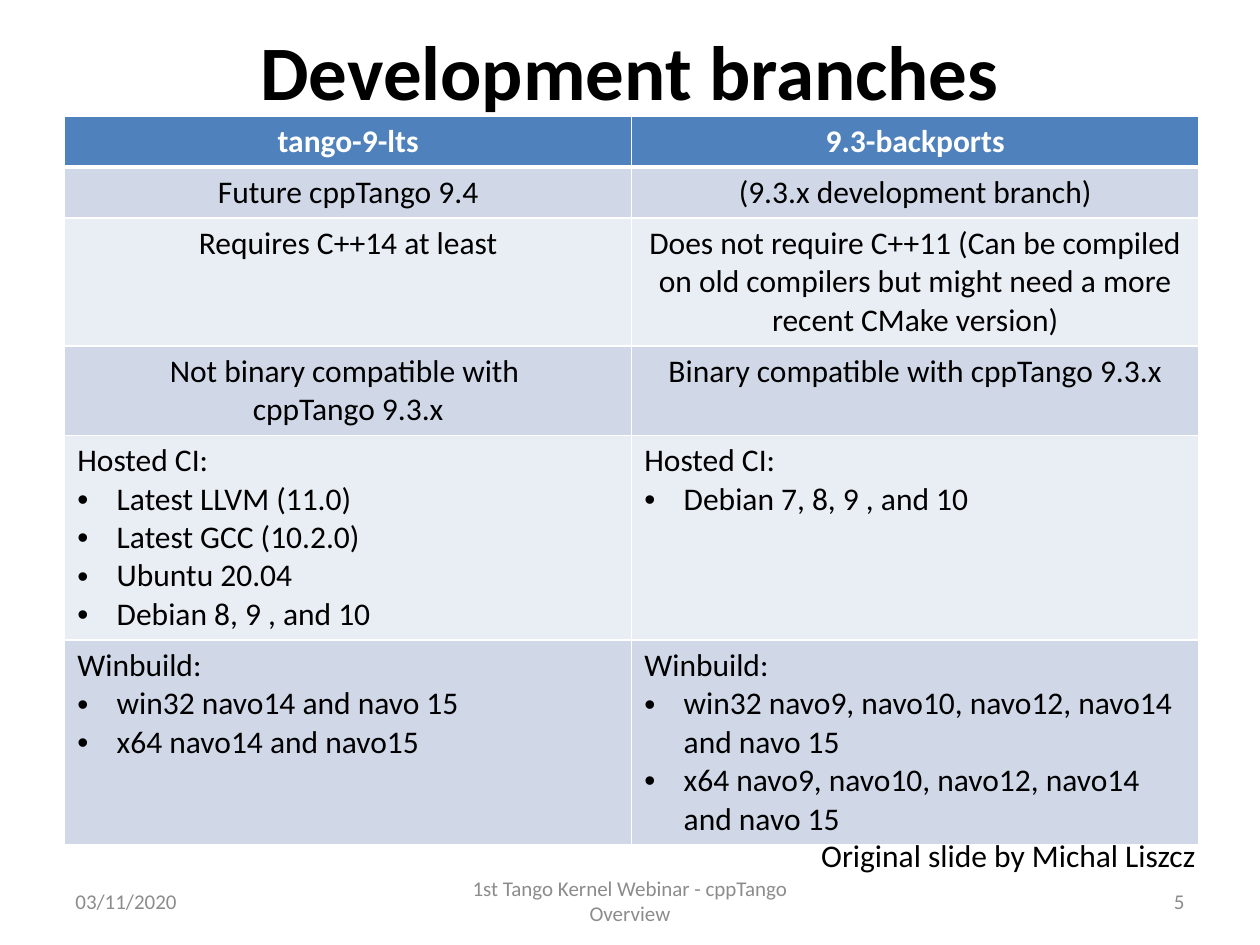
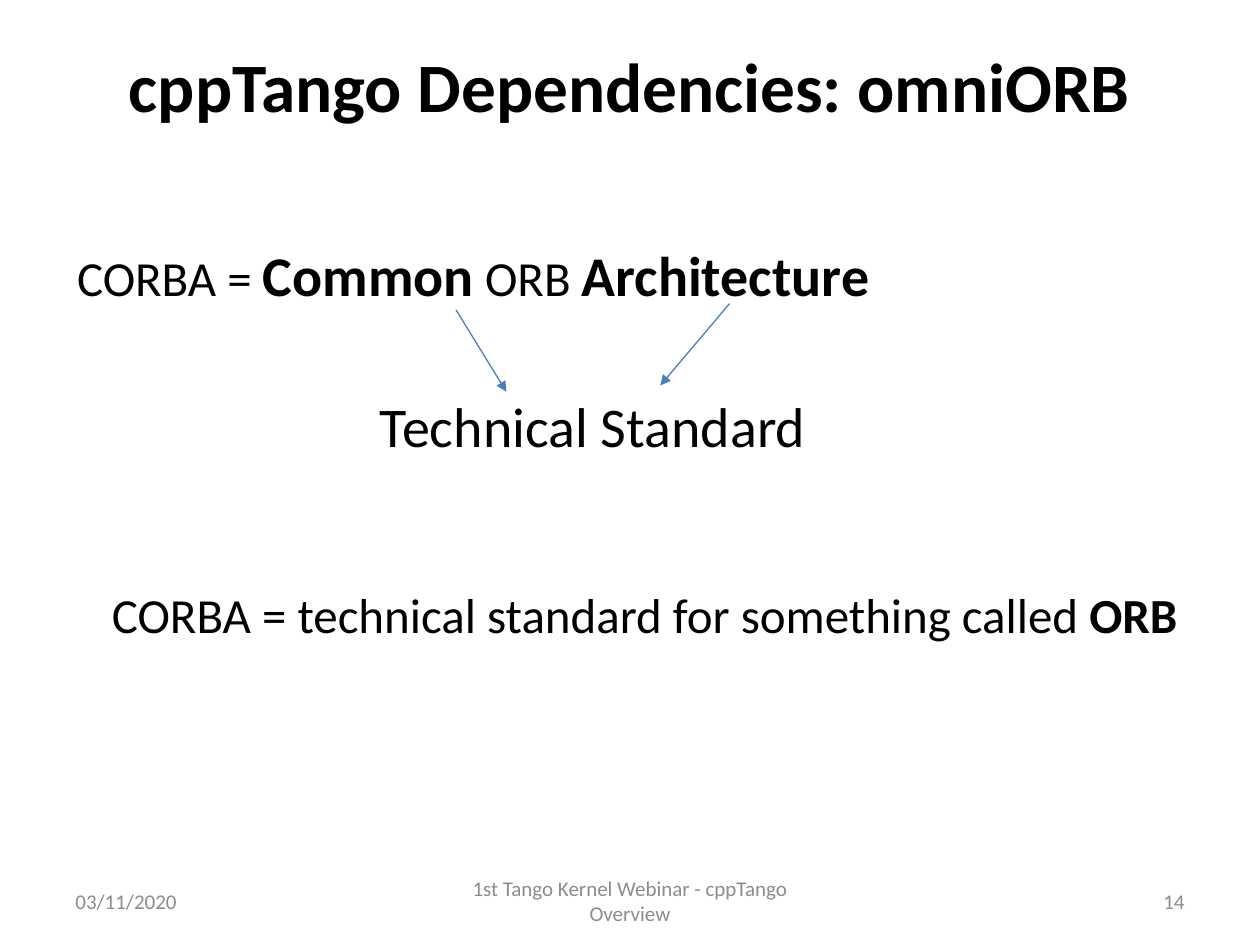
import pptx
import pptx.util
import pptx.dml.color
import pptx.enum.shapes
import pptx.enum.text
import pptx.oxml.ns
from lxml import etree

Pt = pptx.util.Pt
ALIGN = pptx.enum.text.PP_ALIGN
ANCHOR = pptx.enum.text.MSO_ANCHOR
qn = pptx.oxml.ns.qn

# Shared style
FONT = "Calibri"
BLACK, WHITE, GREY = "000000", "FFFFFF", "8C8C8C"
HEADER_BLUE, BAND_DARK, BAND_LIGHT = "4F81BD", "D0D8E8", "E9EDF4"
ARROW_BLUE = "4B7EBC"
MARGIN, CONTENT_WIDTH = 36, 648
BULLET_INDENT = 22.5
TABLE_SIZE, LINE_HEIGHT, CELL_PADDING = 18, 21.97, 7.2
DATE = "03/11/2020"
EVENT = "1st Tango Kernel Webinar - cppTango Overview"

# Table content: (left cell, right cell, lines in the taller cell)
# A tuple is a heading followed by bullets.
BRANCHES = [
    ("tango-9-lts", "9.3-backports", 1),
    ("Future cppTango 9.4", "(9.3.x development branch)", 1),
    ("Requires C++14 at least",
     "Does not require C++11 (Can be compiled on old compilers "
     "but might need a more recent CMake version)", 3),
    ("Not binary compatible with \ncppTango 9.3.x",
     "Binary compatible with cppTango 9.3.x", 2),
    (("Hosted CI:", "Latest LLVM (11.0)", "Latest GCC (10.2.0)",
      "Ubuntu 20.04", "Debian 8, 9 , and 10"),
     ("Hosted CI:", "Debian 7, 8, 9 , and 10"), 5),
    (("Winbuild:", "win32 navo14 and navo 15", "x64 navo14 and navo15"),
     ("Winbuild:", "win32 navo9, navo10, navo12, navo14 and navo 15",
      "x64 navo9, navo10, navo12, navo14 and navo 15"), 5),
]


def color(hex_code):
    return pptx.dml.color.RGBColor.from_string(hex_code)


def style(font, size, hex_code=BLACK, bold=False):
    font.name = FONT
    font.size = Pt(size)
    font.bold = bold
    font.color.rgb = color(hex_code)


def add_text(slide, box, runs, size, hex_code=BLACK, bold=False,
             align=ALIGN.LEFT, anchor=ANCHOR.TOP):
    """Add one paragraph; runs is a string or a list of (text, size, bold)."""
    frame = slide.shapes.add_textbox(*map(Pt, box)).text_frame
    frame.word_wrap = True
    frame.vertical_anchor = anchor
    paragraph = frame.paragraphs[0]
    paragraph.alignment = align
    if isinstance(runs, str):
        paragraph.text = runs
        style(paragraph.font, size, hex_code, bold)
        return
    for text, run_size, run_bold in runs:
        run = paragraph.add_run()
        run.text = text
        style(run.font, run_size, hex_code, run_bold)


def add_title(slide, text, top, size):
    add_text(slide, (MARGIN, top, CONTENT_WIDTH, 90), text, size, bold=True,
             align=ALIGN.CENTER, anchor=ANCHOR.MIDDLE)


def add_footer(slide, number):
    for left, width, text, align in (
            (MARGIN, 168, DATE, ALIGN.LEFT),
            (246, 228, EVENT, ALIGN.CENTER),
            (516, 168, str(number), ALIGN.RIGHT)):
        add_text(slide, (left, 500.5, width, 28.75), text, 12, GREY,
                 align=align, anchor=ANCHOR.MIDDLE)


def add_arrow(slide, start, end):
    arrow = slide.shapes.add_connector(
        pptx.enum.shapes.MSO_CONNECTOR.STRAIGHT, *map(Pt, start + end))
    arrow.line.color.rgb = color(ARROW_BLUE)
    arrow.line.width = Pt(0.75)
    etree.SubElement(arrow.line._get_or_add_ln(), qn("a:tailEnd"), type="triangle")
    etree.SubElement(arrow._element.spPr, qn("a:effectLst"))


def add_bullet(paragraph):
    properties = paragraph._p.get_or_add_pPr()
    properties.set("marL", str(Pt(BULLET_INDENT)))
    properties.set("indent", str(-Pt(BULLET_INDENT)))
    etree.SubElement(properties, qn("a:buFont"), typeface="Arial")
    etree.SubElement(properties, qn("a:buChar"), char="•")


def set_borders(cell, top, bottom):
    properties = cell._tc.get_or_add_tcPr()
    widths = (("lnL", 1), ("lnR", 1), ("lnT", top), ("lnB", bottom))
    for position, (side, width) in enumerate(widths):
        border = etree.Element(qn("a:" + side), w=str(Pt(width)))
        fill = etree.SubElement(border, qn("a:solidFill"))
        etree.SubElement(fill, qn("a:srgbClr"), val=WHITE)
        properties.insert(position, border)


def fill_cell(cell, content, row):
    header = row == 0
    cell.fill.solid()
    cell.fill.fore_color.rgb = color(
        HEADER_BLUE if header else BAND_DARK if row % 2 else BAND_LIGHT)
    set_borders(cell, 3 if row == 1 else 1, 3 if header else 1)

    bulleted = isinstance(content, tuple)
    lines = content if bulleted else content.split("\n")
    cell.text_frame.text = "\n".join(lines)
    for index, paragraph in enumerate(cell.text_frame.paragraphs):
        paragraph.alignment = ALIGN.LEFT if bulleted else ALIGN.CENTER
        if bulleted and index > 0:
            add_bullet(paragraph)
        style(paragraph.font, TABLE_SIZE, WHITE if header else BLACK, header)


def add_branch_table(slide):
    heights = [CELL_PADDING + LINE_HEIGHT * lines for _, _, lines in BRANCHES]
    table = slide.shapes.add_table(
        len(BRANCHES), 2, Pt(37), Pt(66.2), Pt(CONTENT_WIDTH),
        Pt(sum(heights))).table
    for row, (lts, backports, _) in enumerate(BRANCHES):
        table.rows[row].height = Pt(heights[row])
        fill_cell(table.cell(row, 0), lts, row)
        fill_cell(table.cell(row, 1), backports, row)


def build_branches(slide):
    add_title(slide, "Development branches", -5, 44)
    add_branch_table(slide)
    add_footer(slide, 5)
    add_text(slide, (462.2, 474.2, 244, 29), "Original slide by Michal Liszcz", 18)


def build_dependencies(slide):
    add_title(slide, "cppTango Dependencies: omniORB", 3.6, 39.6)
    add_footer(slide, 14)

    # Acronym, with two of its words leading to their meaning
    add_text(slide, (37, 134, 646, 46),
             [("CORBA = ", 28, False), ("Common", 32, True),
              (" ORB ", 28, False), ("Architecture", 32, True)], 28)
    add_text(slide, (172.8, 220.3, 332, 46), "Technical Standard", 32,
             align=ALIGN.CENTER)
    add_arrow(slide, (416.9, 173.5), (377.3, 220.3))
    add_arrow(slide, (260.6, 177.1), (289.4, 223.9))

    # Conclusion
    add_text(slide, (56.9, 330.5, 638, 41),
             [("CORBA = technical standard for something called ", 28, False),
              ("ORB", 28, True)], 28)


def main():
    deck = pptx.Presentation()
    deck.slide_width, deck.slide_height = Pt(720), Pt(540)
    for build in (build_branches, build_dependencies):
        build(deck.slides.add_slide(deck.slide_layouts[6]))
    deck.save("out.pptx")


if __name__ == "__main__":
    main()
